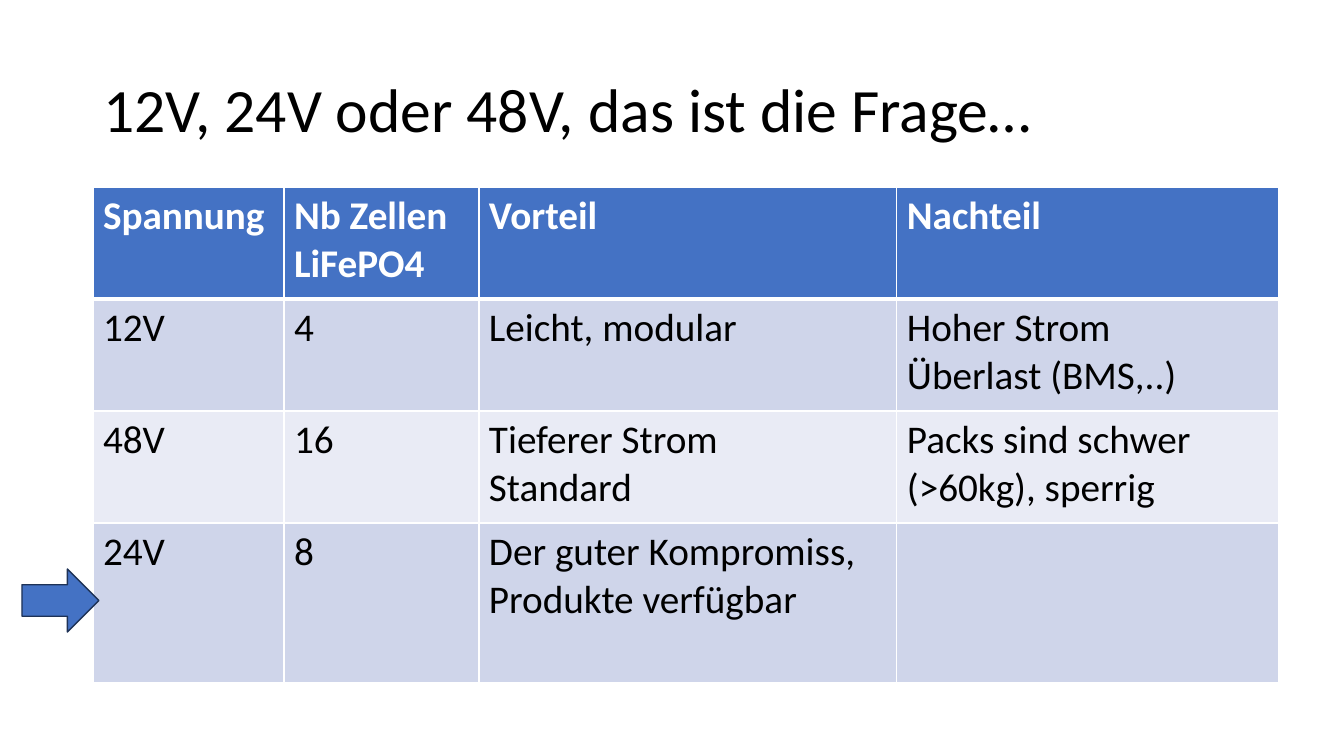
from lxml.etree import fromstring
from pptx import Presentation
from pptx.dml.color import RGBColor
from pptx.enum.shapes import MSO_SHAPE
from pptx.enum.text import MSO_ANCHOR, MSO_AUTO_SIZE, PP_ALIGN
from pptx.util import Emu, Pt

# Content
TITLE = "12V, 24V oder 48V, das ist die Frage…"
ROWS = [
    ("Spannung", "Nb Zellen LiFePO4", "Vorteil", "Nachteil"),
    ("12V", "4", "Leicht, modular", "Hoher Strom \vÜberlast (BMS,..)"),
    ("48V", "16", "Tieferer Strom\vStandard", "Packs sind schwer (>60kg), sperrig"),
    ("24V", "8", "Der guter Kompromiss, Produkte verfügbar", ""),
]

# Geometry in px
SLIDE = (1344, 756)
TITLE_BOX = (93, 40, 1159, 146)
TABLE_POS = (93, 187)
COLS = (191, 195, 418, 382)
HEIGHTS = (112, 112, 112, 160)
ARROW_BOX = (22, 569, 77, 63)

BLACK = RGBColor(0, 0, 0)
WHITE = RGBColor(255, 255, 255)
BLUE = RGBColor(0x44, 0x72, 0xC4)
NAVY = RGBColor(0x1E, 0x32, 0x56)
BAND_DARK = RGBColor(0xCF, 0xD5, 0xEA)
BAND_LIGHT = RGBColor(0xE9, 0xEB, 0xF5)

TITLE_FONT = {"name": "Calibri", "size": Pt(44), "bold": False}
HEAD_FONT = {"name": "Calibri", "size": Pt(28), "bold": True}
BODY_FONT = {**HEAD_FONT, "bold": False}
NS = "http://schemas.openxmlformats.org/drawingml/2006/main"


def px(*values):
    return [Emu(round(v * 914400 / 100.8)) for v in values]


def style(font, values, color):
    for name, value in values.items():
        setattr(font, name, value)
    font.color.rgb = color


def set_borders(cell, widths):
    tc_pr = cell._tc.get_or_add_tcPr()
    for i, (side, width) in enumerate(widths.items()):
        tc_pr.insert(i, fromstring(
            f'<a:ln{side} xmlns:a="{NS}" w="{Pt(width)}"><a:solidFill>'
            f'<a:srgbClr val="{WHITE}"/></a:solidFill></a:ln{side}>'))


prs = Presentation()
prs.slide_width, prs.slide_height = px(*SLIDE)
s = prs.slides.add_slide(prs.slide_layouts[5])

# Title
title = s.shapes.title
title.left, title.top, title.width, title.height = px(*TITLE_BOX)
tf = title.text_frame
tf.text = TITLE
tf.auto_size = MSO_AUTO_SIZE.NONE
tf.vertical_anchor = MSO_ANCHOR.MIDDLE
p = tf.paragraphs[0]
p.alignment, p.line_spacing = PP_ALIGN.LEFT, 0.9
style(p.runs[0].font, TITLE_FONT, BLACK)

# Comparison table
table = s.shapes.add_table(len(ROWS), len(COLS),
                           *px(*TABLE_POS, sum(COLS), sum(HEIGHTS))).table
for col, width in zip(table.columns, px(*COLS)):
    col.width = width
for row, height in zip(table.rows, px(*HEIGHTS)):
    row.height = height
for i, row in enumerate(ROWS):
    head = i == 0
    fill = BLUE if head else BAND_DARK if i % 2 else BAND_LIGHT
    for j, text in enumerate(row):
        cell = table.cell(i, j)
        cell.text = text
        cell.fill.solid()
        cell.fill.fore_color.rgb = fill
        set_borders(cell, {"L": 1, "R": 1, "T": 3 if i == 1 else 1,
                           "B": 3 if head else 1})
        for r in cell.text_frame.paragraphs[0].runs:
            style(r.font, HEAD_FONT if head else BODY_FONT, WHITE if head else BLACK)

# Arrow marking the 24V row
arrow = s.shapes.add_shape(MSO_SHAPE.RIGHT_ARROW, *px(*ARROW_BOX))
arrow.shadow.inherit = False
arrow.fill.solid()
arrow.fill.fore_color.rgb = BLUE
arrow.line.color.rgb = NAVY
arrow.line.width = Pt(1)

prs.save("out.pptx")
